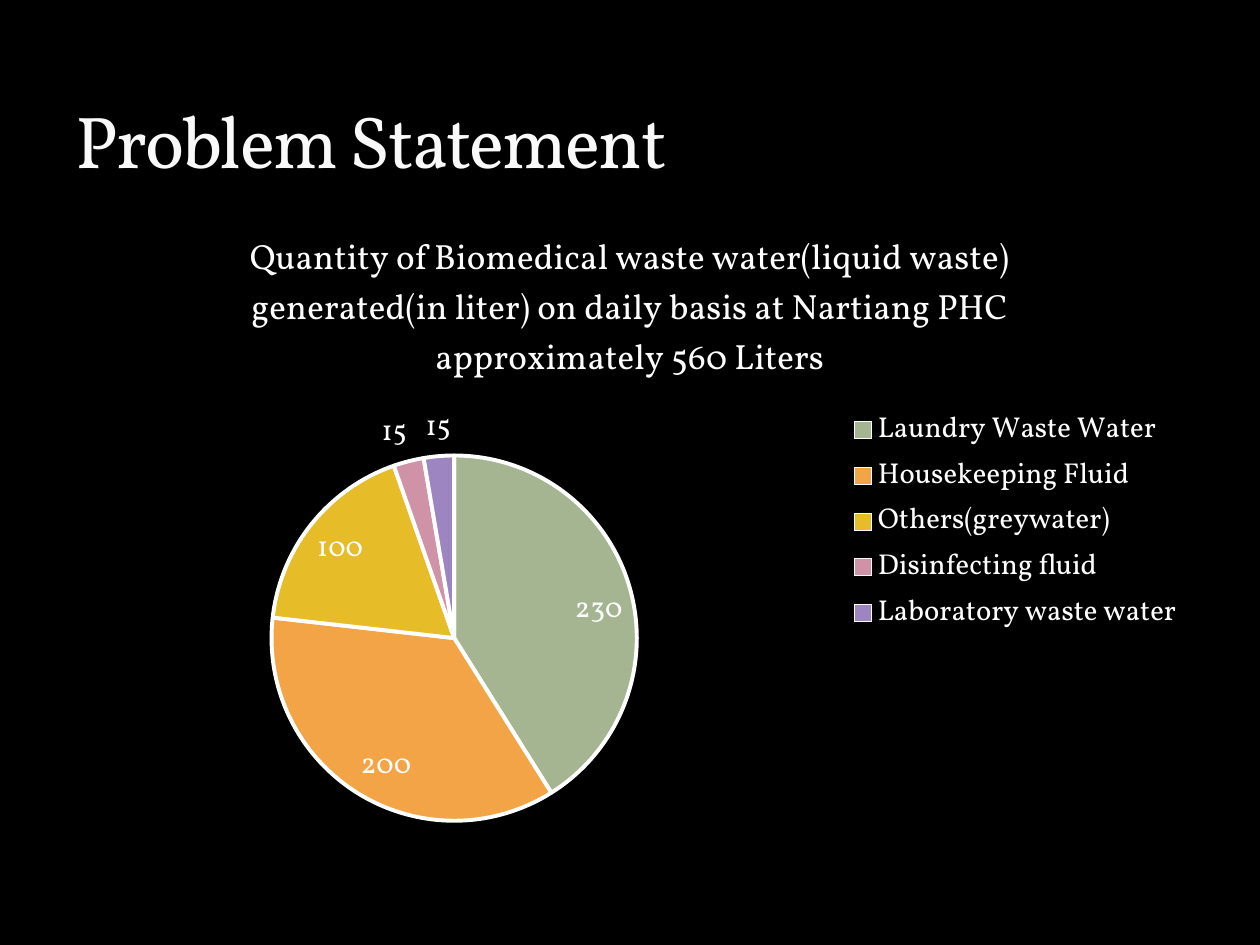
from pptx import Presentation
from pptx.chart.data import CategoryChartData
from pptx.dml.color import RGBColor
from pptx.enum.chart import XL_CHART_TYPE as ChartType
from pptx.enum.chart import XL_LABEL_POSITION as LabelPosition
from pptx.enum.chart import XL_LEGEND_POSITION as LegendPosition
from pptx.enum.text import MSO_ANCHOR as Anchor
from pptx.oxml import parse_xml
from pptx.util import Cm, Pt

FONT = "Vollkorn"
WHITE = "FFFFFF"
HEADING = "Problem Statement"
CHART_TITLE = [
    "Quantity of Biomedical waste water(liquid waste)",
    "generated(in liter) on daily basis at Nartiang PHC",
    "approximately 560 Liters",
]
WASTE = [
    ("Laundry Waste Water", 230, "A5B592"),
    ("Housekeeping Fluid", 200, "F3A447"),
    ("Others(greywater)", 100, "E7BC29"),
    ("Disinfecting fluid", 15, "D092A7"),
    ("Laboratory waste water", 15, "9C85C0"),
]
SMALL_SLICE = 50
PIE_AREA = {"x": 0.18, "y": 0.39, "w": 0.33, "h": 0.58}
LEGEND_AREA = {"x": 0.69, "y": 0.31, "w": 0.3, "h": 0.37}
CHART_NS = "http://schemas.openxmlformats.org/drawingml/2006/chart"


def color(value):
    return RGBColor.from_string(value)


def style(font, size, hue=WHITE):
    font.name = FONT
    font.size = Pt(size)
    font.bold = False
    font.color.rgb = color(hue)


def write(para, text, size, hue=WHITE, spacing=None):
    span = para.add_run()
    span.text = text
    style(span.font, size, hue)
    if spacing is not None:
        span.font._element.set("spc", str(spacing))


def place(parent, index, area, target=""):
    modes = '<c:xMode val="edge"/><c:yMode val="edge"/>'
    sides = "".join(f'<c:{side} val="{part}"/>' for side, part in area.items())
    for old in parent.findall(f"{{{CHART_NS}}}layout"):
        parent.remove(old)
    layout = parse_xml(
        f'<c:layout xmlns:c="{CHART_NS}"><c:manualLayout>{target}{modes}{sides}'
        "</c:manualLayout></c:layout>"
    )
    parent.insert(index, layout)


def add_heading(page):
    box = page.shapes.add_textbox(Cm(1.27), Cm(0.42), Cm(22.86), Cm(3.39))
    frame = box.text_frame
    frame.word_wrap = True
    frame.vertical_anchor = Anchor.BOTTOM
    write(frame.paragraphs[0], HEADING, 42, hue="F9F9F9", spacing=-100)


def add_pie(page):
    data = CategoryChartData()
    data.categories = [name for name, _, _ in WASTE]
    data.add_series("Series 1", [liters for _, liters, _ in WASTE])
    chart = page.shapes.add_chart(
        ChartType.PIE, Cm(1.27), Cm(4.23), Cm(22.86), Cm(12.7), data
    ).chart
    style(chart.font, 10)

    chart.has_title = True
    title = chart.chart_title.text_frame
    for number, line in enumerate(CHART_TITLE):
        para = title.add_paragraph() if number else title.paragraphs[0]
        write(para, line, 20)

    chart.has_legend = True
    legend = chart.legend
    legend.position = LegendPosition.RIGHT
    legend.include_in_layout = False
    style(legend.font, 16.4)
    place(legend._element, 1, LEGEND_AREA)

    plot = chart.plots[0]
    plot.vary_by_categories = True
    place(plot._element.getparent(), 0, PIE_AREA, '<c:layoutTarget val="inner"/>')
    series = plot.series[0]
    series.data_labels.show_value = True
    style(series.data_labels.font, 16.5)
    for index, (_, liters, hue) in enumerate(WASTE):
        point = series.points[index]
        point.format.fill.solid()
        point.format.fill.fore_color.rgb = color(hue)
        point.format.line.color.rgb = color(WHITE)
        point.format.line.width = Pt(2.25)
        label = point.data_label
        style(label.font, 16.5)
        small = liters < SMALL_SLICE
        label.position = LabelPosition.OUTSIDE_END if small else LabelPosition.INSIDE_END


def main():
    """Build the waste water slide and save it."""
    deck = Presentation()
    deck.slide_width, deck.slide_height = Cm(25.4), Cm(19.05)
    page = deck.slides.add_slide(deck.slide_layouts[6])
    page.background.fill.solid()
    page.background.fill.fore_color.rgb = color("000000")
    add_pie(page)
    add_heading(page)
    deck.save("out.pptx")


if __name__ == "__main__":
    main()
